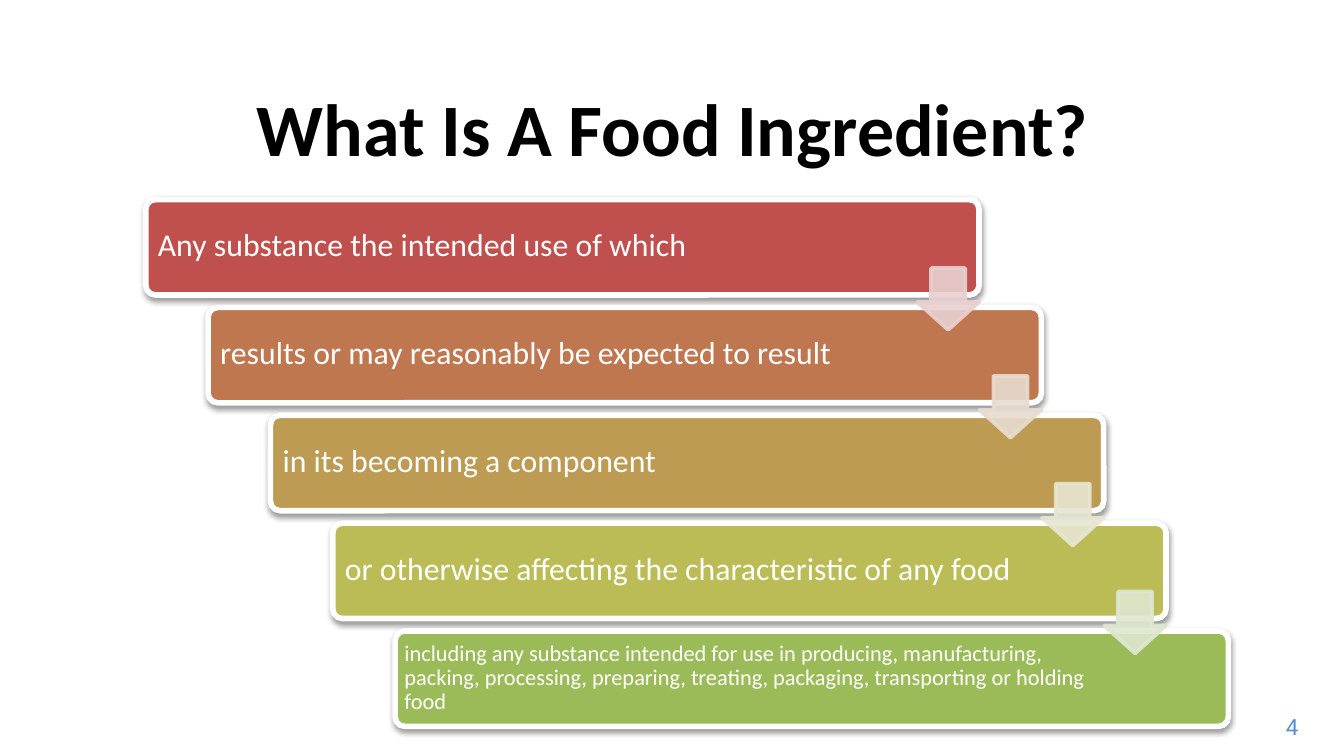
from pptx import Presentation
from pptx.dml.color import RGBColor
from pptx.enum.shapes import MSO_SHAPE
from pptx.enum.text import MSO_ANCHOR, PP_ALIGN
from pptx.oxml.ns import qn
from pptx.util import Pt
from lxml import etree

ROUNDED = MSO_SHAPE.ROUNDED_RECTANGLE
DOWN_ARROW = MSO_SHAPE.DOWN_ARROW
MIDDLE, TOP = MSO_ANCHOR.MIDDLE, MSO_ANCHOR.TOP
LEFT, CENTER, RIGHT = PP_ALIGN.LEFT, PP_ALIGN.CENTER, PP_ALIGN.RIGHT

SCALE = 4572
TITLE_ONLY = 5
COLORS = {"ink": "000000", "white": "FFFFFF", "number": "558ED5"}
STEPS = [
    ("Any substance the intended use of which", "C0504D", 17, 14),
    ("results or may reasonably be expected to result", "BF7750", 17, 14),
    ("in its becoming a component", "BD9B53", 17, 14),
    ("or otherwise affecting the characteristic of any food", "BCBC56", 17, 14),
    ("including any substance intended for use in producing, manufacturing, "
     "packing, processing, preparing, treating, packaging, transporting or "
     "holding food", "9BBB59", 12, 10),
]
ARROW_COLORS = ["E8D0D0", "E8DCD0", "E7E6D1", "DEE7D1"]


def px(length):
    """Turn pixels into EMU."""
    return round(length * SCALE)


def place(shape, box):
    """Move and size a shape to a pixel box."""
    shape.left, shape.top, shape.width, shape.height = map(px, box)


def write_text(shape, text, size, color, font="Calibri", bold=False,
               align=LEFT, anchor=MIDDLE, inset=14, side_inset=None,
               wrap=True, spacing=None):
    """Fill a shape with one formatted paragraph."""
    frame = shape.text_frame
    frame.word_wrap = wrap
    frame.vertical_anchor = anchor
    frame.margin_left = frame.margin_right = px(side_inset or inset)
    frame.margin_top = frame.margin_bottom = px(inset)
    para = frame.paragraphs[0]
    para.alignment = align
    para.line_spacing = spacing
    span = para.add_run()
    span.text = text
    span.font.name = font
    span.font.size = Pt(size)
    span.font.bold = bold
    span.font.color.rgb = RGBColor.from_string(color)


def add_block(page, kind, box, fill, line, line_width, adjustments):
    """Add a filled and outlined preset shape without a shadow."""
    block = page.shapes.add_shape(kind, *map(px, box))
    for index, value in enumerate(adjustments):
        block.adjustments[index] = value
    block.fill.solid()
    block.fill.fore_color.rgb = RGBColor.from_string(fill)
    block.line.color.rgb = RGBColor.from_string(line)
    block.line.width = Pt(line_width)
    block.shadow.inherit = False
    return block


def set_alpha(color_element, percent):
    """Set the opacity of a colour element."""
    etree.SubElement(color_element, qn("a:alpha"), val=str(percent * 1000))


def add_shadow(shape):
    """Cast a soft shadow straight down."""
    effects = shape._element.spPr.find(qn("a:effectLst"))
    shadow = etree.SubElement(
        effects, qn("a:outerShdw"), blurRad=str(Pt(3.1)), dist=str(Pt(1.6)),
        dir="5400000", rotWithShape="0")
    color = etree.SubElement(shadow, qn("a:srgbClr"), val=COLORS["ink"])
    set_alpha(color, 38)


def add_title(page, box, text):
    """Format the title placeholder."""
    title = page.shapes.title
    place(title, box)
    write_text(title, text, 39.6, COLORS["ink"], bold=True, align=CENTER)


def add_step(page, box, text, fill, size, inset):
    """Add one bar of the staircase and its text."""
    left, top, width, height = box
    bar = add_block(page, ROUNDED, box, fill, COLORS["white"], 3, [0.1])
    add_shadow(bar)
    label = page.shapes.add_textbox(
        *map(px, (left + 4, top + 4, width - 192, height - 10)))
    write_text(label, text, size, COLORS["white"], inset=inset, spacing=0.9)


def add_arrow(page, box, color):
    """Add a translucent arrow that leads to the next step."""
    arrow = add_block(page, DOWN_ARROW, box, color, color, 2, [0.55, 0.45])
    for element in arrow._element.spPr.iter(qn("a:srgbClr")):
        set_alpha(element, 90)


def add_staircase(page, box):
    """Lay the steps diagonally across the box, with arrows between them."""
    left, top, width, height = box
    bar_width, bar_height, arrow_size = 1240, 142, 92
    gaps = len(STEPS) - 1
    step_x = (width - bar_width) / gaps
    step_y = (height - bar_height) / gaps
    corners = [(left + i * step_x, top + i * step_y) for i in range(len(STEPS))]
    for (x, y), step in zip(corners, STEPS):
        add_step(page, (x, y, bar_width, bar_height), *step)
    for (x, y), color in zip(corners, ARROW_COLORS):
        arrow_left = x + bar_width - arrow_size
        add_arrow(page, (arrow_left, y + 102, arrow_size, arrow_size), color)


def add_page_number(page, box, text):
    """Add the page number."""
    number = page.shapes.add_textbox(*map(px, box))
    write_text(number, text, 12, COLORS["number"], font="Roboto", align=RIGHT,
               anchor=TOP, inset=10, side_inset=20, wrap=False)


def main():
    """Build and save the deck."""
    deck = Presentation()
    deck.slide_width, deck.slide_height = px(2000), px(1125)
    page = deck.slides.add_slide(deck.slide_layouts[TITLE_ONLY])
    add_page_number(page, (1870, 1052, 82, 60), "4")
    add_title(page, (70, 113, 1862, 152), "What Is A Food Ingredient?")
    add_staircase(page, (217, 297, 1611, 784))
    deck.save("out.pptx")


if __name__ == "__main__":
    main()
